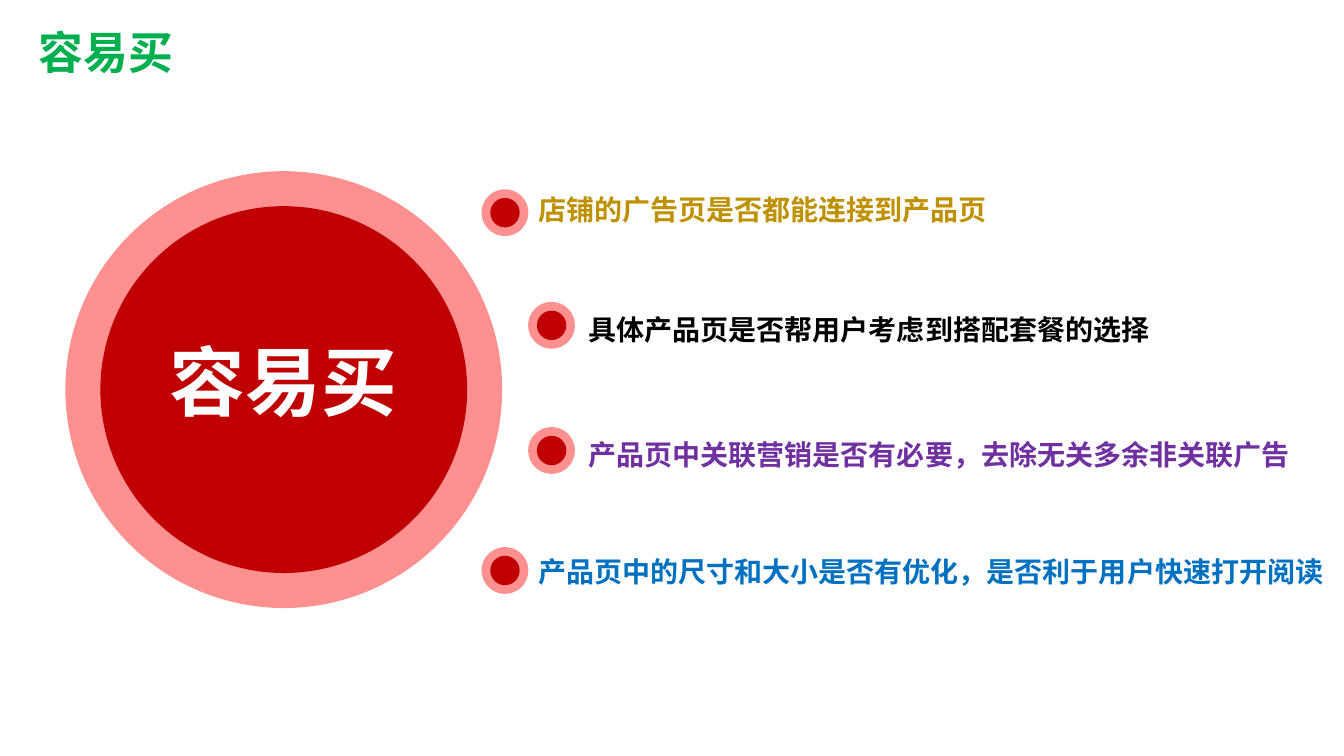
from dataclasses import dataclass

import lxml.etree
import pptx
import pptx.dml.color
import pptx.enum.shapes
import pptx.enum.text
import pptx.oxml.ns
import pptx.util

Pt = pptx.util.Pt
ALIGN = pptx.enum.text.PP_ALIGN
ANCHOR = pptx.enum.text.MSO_ANCHOR


@dataclass(frozen=True)
class Theme:
    font: str = "Noto Sans CJK SC"
    ring: str = "FF9090"
    core: str = "C00000"
    hub: str = "FFFFFF"
    heading: str = "00B050"
    gold: str = "BF9000"
    black: str = "000000"
    purple: str = "7030A0"
    blue: str = "0070C0"
    hub_size: int = 54
    heading_size: int = 32
    point_size: int = 20


class SlideBuilder:
    def __init__(self, slide, theme):
        self.slide = slide
        self.theme = theme

    def circle(self, center_x, center_y, diameter, color):
        disc = self.slide.shapes.add_shape(
            pptx.enum.shapes.MSO_SHAPE.OVAL,
            Pt(center_x - diameter / 2), Pt(center_y - diameter / 2),
            Pt(diameter), Pt(diameter))
        disc.shadow.inherit = False
        disc.fill.solid()
        disc.fill.fore_color.rgb = pptx.dml.color.RGBColor.from_string(color)
        disc.line.fill.background()

    def ringed_disc(self, center_x, center_y, outer, inner):
        self.circle(center_x, center_y, outer, self.theme.ring)
        self.circle(center_x, center_y, inner, self.theme.core)

    def text(self, box, wording, size, color, align=ALIGN.LEFT,
             anchor=ANCHOR.TOP, wrap=True):
        frame = self.slide.shapes.add_textbox(*map(Pt, box)).text_frame
        frame.word_wrap = wrap
        frame.vertical_anchor = anchor
        paragraph = frame.paragraphs[0]
        paragraph.text = wording
        paragraph.alignment = align
        font = paragraph.font
        font.size = Pt(size)
        font.bold = True
        font.color.rgb = pptx.dml.color.RGBColor.from_string(color)
        font.name = self.theme.font
        properties = paragraph._p.pPr.find(pptx.oxml.ns.qn("a:defRPr"))
        east_asian = lxml.etree.SubElement(properties, pptx.oxml.ns.qn("a:ea"))
        east_asian.set("typeface", self.theme.font)


def main():
    deck = pptx.Presentation()
    deck.slide_width, deck.slide_height = Pt(960), Pt(540)
    theme = Theme()
    builder = SlideBuilder(deck.slides.add_slide(deck.slide_layouts[6]), theme)

    builder.ringed_disc(202.7, 278.3, 312, 262)
    builder.text((113.8, 235.4, 177, 72.7), "容易买", theme.hub_size, theme.hub,
                 ALIGN.CENTER, ANCHOR.MIDDLE, wrap=False)

    outer_x, inner_x = 360.7, 394
    outer_text, inner_text = 377.3, 413.3
    points = [
        (outer_x, 151.9, outer_text, 133.9, theme.gold,
         "店铺的广告页是否都能连接到产品页"),
        (inner_x, 232.4, inner_text, 219.6, theme.black,
         "具体产品页是否帮用户考虑到搭配套餐的选择"),
        (inner_x, 321.8, inner_text, 308.9, theme.purple,
         "产品页中关联营销是否有必要，去除无关多余非关联广告"),
        (outer_x, 407.5, outer_text, 392.4, theme.blue,
         "产品页中的尺寸和大小是否有优化，是否利于用户快速打开阅读"),
    ]
    for bullet_x, bullet_y, text_x, text_y, color, wording in points:
        builder.ringed_disc(bullet_x, bullet_y, 33.4, 21)
        builder.text((text_x, text_y, 960 - text_x, 31.7), wording,
                     theme.point_size, color)

    builder.text((20.2, 14.4, 110.9, 46.1), "容易买", theme.heading_size,
                 theme.heading, ALIGN.CENTER, wrap=False)

    deck.save("out.pptx")


if __name__ == "__main__":
    main()
